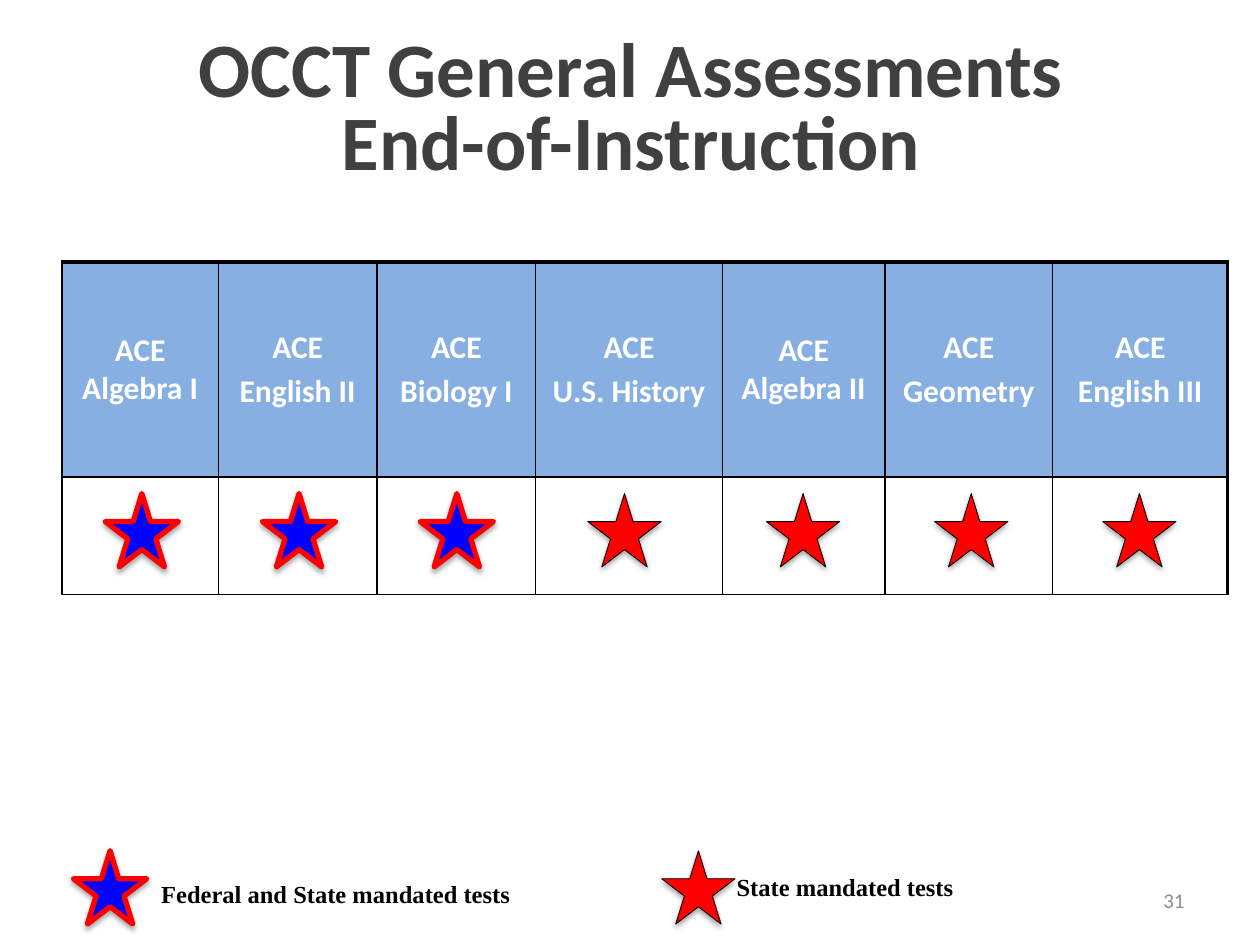
from lxml import etree
from pptx import Presentation
from pptx import util as u
from pptx.dml.color import RGBColor
from pptx.enum import shapes, text
from pptx.oxml import parse_xml
from pptx.oxml.ns import nsdecls, qn

TITLE = ["OCCT General Assessments", "End-of-Instruction"]
# heading paragraphs, column width in cm, star kind, star left in cm
TESTS = [
    (["ACE Algebra I"], 3.15, "federal", 2.12),
    (["ACE", "English II"], 3.2, "federal", 5.29),
    (["ACE", "Biology I"], 3.2, "federal", 8.47),
    (["ACE", "U.S. History"], 3.76, "state", 11.85),
    (["ACE Algebra II"], 3.28, "state", 15.45),
    (["ACE", "Geometry"], 3.38, "state", 18.84),
    (["ACE", "English III"], 3.53, "state", 22.23),
]
# star kind, star left, label, label box
LEGEND = [
    ("federal", 1.48, "Federal and State mandated tests", (3, 17.6, 7.8, 0.86)),
    ("state", 13.34, "State mandated tests", (14.6, 17.45, 5.51, 0.86)),
]
STARS = {"federal": ("0000FF", "FF0000", 3), "state": ("FF0000", "000000", 0.5)}
STAR_SIZE, TABLE_STAR_TOP, LEGEND_STAR_TOP = 1.48, 9.95, 17.15
TABLE_LEFT, TABLE_TOP, ROW_HEIGHTS = 1.25, 5.28, (4.34, 2.36)

TITLE_FONT = {"name": "Calibri", "size": u.Pt(44), "bold": True}
HEADING_FONT = {"name": "Calibri", "size": u.Pt(18), "bold": True}
LEGEND_FONT = {"name": "Times New Roman", "size": u.Pt(14), "bold": True}
NUMBER_FONT = {"name": "Calibri", "size": u.Pt(12), "bold": False}


def color(value):
    return RGBColor.from_string(value)


def write(frame, lines, font, ink, **layout):
    """Fill a text frame; layout holds paragraph attributes."""
    frame.word_wrap = True
    for index, line in enumerate(lines):
        paragraph = frame.paragraphs[0] if index == 0 else frame.add_paragraph()
        paragraph.text = line
        for name, value in font.items():
            setattr(paragraph.font, name, value)
        paragraph.font.color.rgb = color(ink)
        for name, value in layout.items():
            if name != "space_before" or index > 0:
                setattr(paragraph, name, value)


def add_text(slide, box, lines, font, ink, **layout):
    frame = slide.shapes.add_textbox(*map(u.Cm, box)).text_frame
    write(frame, lines, font, ink, **layout)
    return frame


def add_star(slide, kind, left, top):
    fill, line, width = STARS[kind]
    star = slide.shapes.add_shape(
        shapes.MSO_SHAPE.STAR_5_POINT, *map(u.Cm, (left, top, STAR_SIZE, STAR_SIZE)))
    star.fill.solid()
    star.fill.fore_color.rgb = color(fill)
    star.line.color.rgb = color(line)
    star.line.width = u.Pt(width)
    star.shadow.inherit = False
    effects = star._element.spPr.find(qn("a:effectLst"))
    effects.append(parse_xml(
        f'<a:outerShdw {nsdecls("a")} blurRad="{u.Pt(3.1)}" dist="{u.Pt(1.8)}" '
        'dir="5400000" rotWithShape="0"><a:srgbClr val="000000">'
        '<a:alpha val="35000"/></a:srgbClr></a:outerShdw>'))


def set_borders(cell, widths):
    """Draw black borders; the line elements go ahead of the cell fill."""
    properties = cell._tc.get_or_add_tcPr()
    for index, (side, width) in enumerate(widths.items()):
        properties.insert(index, parse_xml(
            f'<a:ln{side} {nsdecls("a")} w="{u.Pt(width)}"><a:solidFill>'
            f'<a:srgbClr val="000000"/></a:solidFill></a:ln{side}>'))


def add_test_table(slide):
    widths = [width for _, width, _, _ in TESTS]
    table = slide.shapes.add_table(
        2, len(TESTS), u.Cm(TABLE_LEFT), u.Cm(TABLE_TOP),
        u.Cm(sum(widths)), u.Cm(sum(ROW_HEIGHTS))).table
    table.horz_banding = table.first_row = False
    for row, height in zip(table.rows, ROW_HEIGHTS):
        row.height = u.Cm(height)
    for column, (heading, width, kind, star_left) in enumerate(TESTS):
        table.columns[column].width = u.Cm(width)
        right = 2.25 if column == len(TESTS) - 1 else 1
        head, body = table.cell(0, column), table.cell(1, column)
        head.vertical_anchor = text.MSO_ANCHOR.MIDDLE
        write(head.text_frame, heading, HEADING_FONT, "FFFFFF",
              alignment=text.PP_ALIGN.CENTER, space_before=u.Pt(3.6))
        head.fill.solid()
        head.fill.fore_color.rgb = color("558ED5")
        tint = head._tc.tcPr.find(".//" + qn("a:srgbClr"))
        etree.SubElement(tint, qn("a:alpha")).set("val", "70000")
        body.fill.background()
        set_borders(head, {"L": 1, "R": right, "T": 2.25, "B": 1})
        set_borders(body, {"L": 1, "R": right, "T": 1, "B": 1})
        add_star(slide, kind, star_left, TABLE_STAR_TOP)


def main():
    presentation = Presentation()
    presentation.slide_width, presentation.slide_height = u.Cm(25.4), u.Cm(19.05)
    slide = presentation.slides.add_slide(presentation.slide_layouts[6])
    add_test_table(slide)
    add_text(slide, (0.03, 0.64, 25.4, 3.81), TITLE, TITLE_FONT, "404040",
             alignment=text.PP_ALIGN.CENTER, line_spacing=0.8)
    for kind, star_left, label, box in LEGEND:
        add_text(slide, box, [label], LEGEND_FONT, "000000")
        add_star(slide, kind, star_left, LEGEND_STAR_TOP)
    number = add_text(slide, (18.2, 17.65, 5.93, 1.01), ["31"], NUMBER_FONT, "8C8C8C",
                      alignment=text.PP_ALIGN.RIGHT)
    number.vertical_anchor = text.MSO_ANCHOR.MIDDLE
    presentation.save("out.pptx")


if __name__ == "__main__":
    main()
